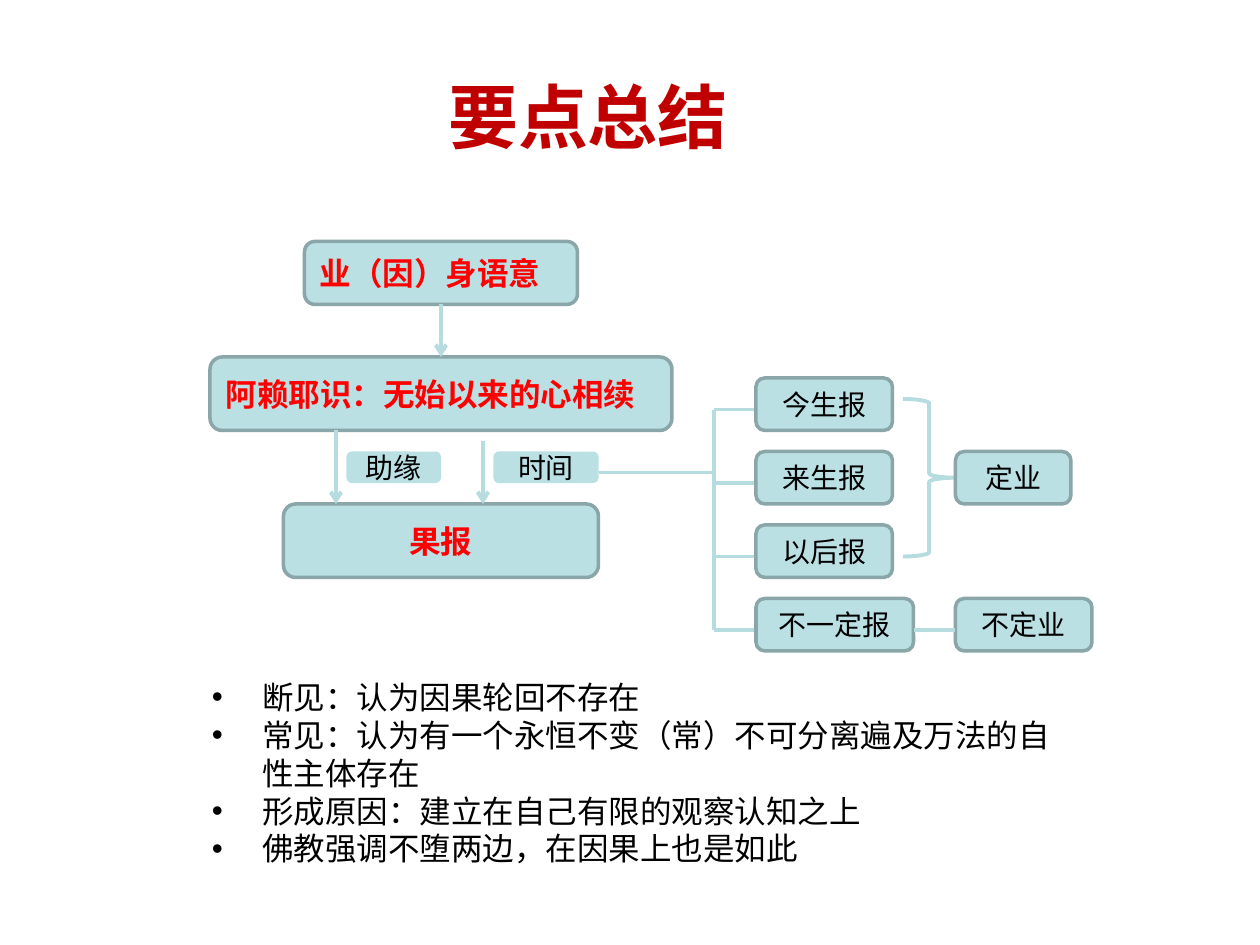
import pptx
import pptx.dml.color
import pptx.enum.shapes
import pptx.enum.text
import pptx.oxml
import pptx.oxml.ns
import pptx.util
from lxml import etree

SHAPES = pptx.enum.shapes.MSO_SHAPE
ALIGN = pptx.enum.text.PP_ALIGN
MIDDLE = pptx.enum.text.MSO_ANCHOR.MIDDLE
TOP, BOTTOM = 0, 2
COLUMNS, ROWS = 120, 90
WIDTH, HEIGHT = pptx.util.Inches(10), pptx.util.Inches(7.5)

FILL, BORDER, LINK = "BBE0E3", "8AA6A8", "B6DCDF"
HEADING = {"size": pptx.util.Pt(40), "bold": True, "color": "C00000"}
STAGE = {"size": pptx.util.Pt(18), "bold": True, "color": "FF0000"}
LABEL = {"size": pptx.util.Pt(16), "color": "000000"}
BODY = {"size": pptx.util.Pt(18), "color": "000000"}


def rgb(color):
    return pptx.dml.color.RGBColor.from_string(color)


def grid(column, row):
    """Turn grid columns and rows into slide lengths."""
    return round(WIDTH * column / COLUMNS), round(HEIGHT * row / ROWS)


def place(box):
    return *grid(*box[:2]), *grid(*box[2:])


def shift(box, left, top, width, height):
    """Move a box that is given relative to its region."""
    return box[0] + left, box[1] + top, width, height


def add_child(parent, tag, **attributes):
    child = etree.SubElement(parent, pptx.oxml.ns.qn(tag))
    for name, value in attributes.items():
        child.set(name, value)
    return child


def format_text(paragraph, text, style, alignment):
    paragraph.text = text
    paragraph.alignment = alignment
    for name, value in {"name": "Arial", **style}.items():
        if name == "color":
            paragraph.font.color.rgb = rgb(value)
        else:
            setattr(paragraph.font, name, value)


def format_line(line, color, width):
    line.color.rgb = rgb(color)
    line.width = pptx.util.Pt(width)


def add_node(slide, box, text, style=LABEL, alignment=ALIGN.CENTER, border=True):
    shape = slide.shapes.add_shape(SHAPES.FLOWCHART_ALTERNATE_PROCESS, *place(box))
    shape.shadow.inherit = False
    shape.fill.solid()
    shape.fill.fore_color.rgb = rgb(FILL)
    if border:
        format_line(shape.line, BORDER, 2)
    else:
        shape.line.fill.background()
    shape.text_frame.vertical_anchor = MIDDLE
    format_text(shape.text_frame.paragraphs[0], text, style, alignment)
    return shape


def add_link(slide, start, end, arrow=False):
    connector = slide.shapes.add_connector(
        pptx.enum.shapes.MSO_CONNECTOR.STRAIGHT, *grid(*start), *grid(*end))
    format_line(connector.line, LINK, 2.25)
    if arrow:
        add_child(connector.line._get_or_add_ln(), "a:tailEnd", type="arrow")
    add_child(connector._element.spPr, "a:effectLst")
    return connector


def add_title(slide, box, text):
    title = slide.shapes.title
    title.left, title.top, title.width, title.height = place(box)
    title.text_frame.vertical_anchor = MIDDLE
    format_text(title.text_frame.paragraphs[0], text, HEADING, ALIGN.CENTER)


def add_cause_flow(slide, box):
    """Cause, store consciousness and result, from top to bottom."""
    left, top = box[:2]
    cause = add_node(slide, shift(box, 9, 0, 26, 6), "业（因）身语意", STAGE, ALIGN.LEFT)
    store = add_node(slide, shift(box, 0, 11, 44, 7), "阿赖耶识：无始以来的心相续",
                     STAGE, ALIGN.LEFT)
    add_node(slide, shift(box, 7, 25, 30, 7), "果报", STAGE)

    arrow = add_link(slide, (left + 22, top + 6), (left + 22, top + 11), arrow=True)
    arrow.begin_connect(cause, BOTTOM)
    arrow.end_connect(store, TOP)

    # Conditions beside the two arrows to the result
    for column, row, width, text in ((12, 18, 9, "助缘"), (26, 19, 10, "时间")):
        add_link(slide, (left + column, top + row), (left + column, top + 25), arrow=True)
        add_node(slide, shift(box, column + 1, 20, width, 3), text, border=False)


def add_result_tree(slide, box):
    """Kinds of result by time, and whether they are fixed."""
    left, top = box[:2]
    spine, branch, outcome, pitch, joint = 11, 15, 34, 7, 3
    kinds = ("今生报", "来生报", "以后报", "不一定报")
    last = pitch * (len(kinds) - 1)

    # Stem, spine and branches
    add_link(slide, (left, top + 9), (left + spine, top + 9))
    add_link(slide, (left + spine, top + joint), (left + spine, top + last + joint))
    for index, text in enumerate(kinds):
        row = pitch * index
        add_link(slide, (left + spine, top + row + joint),
                 (left + branch, top + row + joint))
        add_node(slide, shift(box, branch, row, 15 if row == last else 13, 5), text)

    # Brace over the first three kinds
    brace = slide.shapes.add_shape(SHAPES.RIGHT_BRACE, *place(shift(box, 29, 2, 5, 15)))
    brace.shadow.inherit = False
    brace.fill.background()
    format_line(brace.line, LINK, 2.25)
    brace.adjustments[0] = 0.083
    brace.adjustments[1] = 0.5

    # Outcomes
    add_node(slide, shift(box, outcome, pitch, 11, 5), "定业")
    add_node(slide, shift(box, outcome, last, 13, 5), "不定业")
    add_link(slide, (left + outcome, top + last + joint),
             (left + branch + 15, top + last + joint))


def add_notes_list(slide, box, lines):
    frame = slide.shapes.add_textbox(*place(box)).text_frame
    frame.word_wrap = True
    indent = pptx.util.Inches(0.4)
    for index, text in enumerate(lines):
        paragraph = frame.add_paragraph() if index else frame.paragraphs[0]
        paragraph.level = 1
        properties = paragraph._p.get_or_add_pPr()
        properties.set("marL", str(indent))
        properties.set("indent", str(-indent))
        add_child(properties, "a:buFont", typeface="Arial")
        add_child(properties, "a:buChar", char="•")
        format_text(paragraph, text, BODY, ALIGN.LEFT)


def main():
    presentation = pptx.Presentation()
    presentation.slide_width, presentation.slide_height = WIDTH, HEIGHT
    slide = presentation.slides.add_slide(presentation.slide_layouts[5])
    add_title(slide, (0, 3.5, 112, 15), "要点总结")
    add_cause_flow(slide, (20, 23, 44, 32))
    add_result_tree(slide, (57, 36, 47, 26))
    add_notes_list(slide, (19, 64, 83, 19.5), (
        "断见：认为因果轮回不存在",
        "常见：认为有一个永恒不变（常）不可分离遍及万法的自性主体存在",
        "形成原因：建立在自己有限的观察认知之上",
        "佛教强调不堕两边，在因果上也是如此",
    ))
    presentation.save("out.pptx")


if __name__ == "__main__":
    main()
